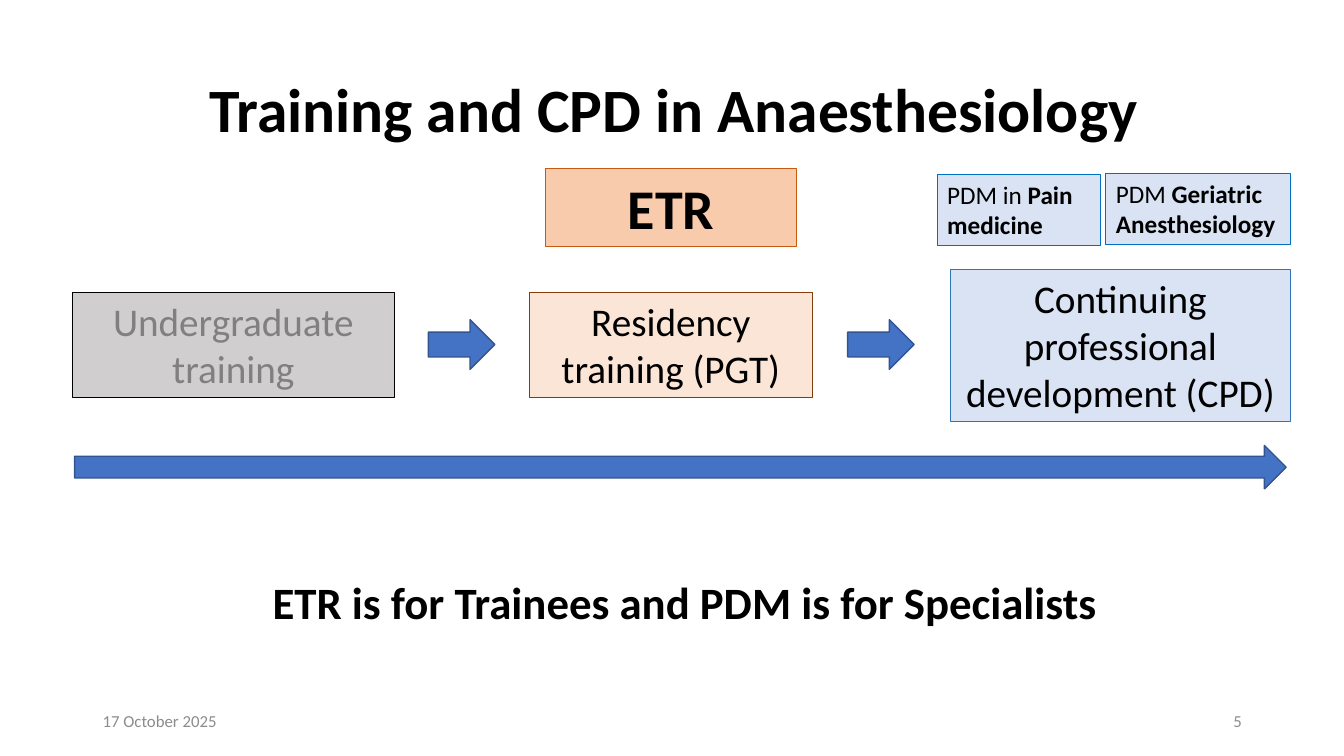
"""Builds the slide on training and CPD in anaesthesiology."""
import pptx
import pptx.util
import pptx.dml.color
import pptx.enum.shapes
import pptx.enum.text

Pt = pptx.util.Pt
ALIGN = pptx.enum.text.PP_ALIGN
ANCHOR = pptx.enum.text.MSO_ANCHOR
SHAPE = pptx.enum.shapes.MSO_SHAPE

COLORS = {
    "black": "000000", "grey_text": "808080", "footer": "8C8C8C",
    "grey": "D0CECE", "arrow": "4472C4", "arrow_line": "325491",
    "pale_orange": "FBE5D6", "brown": "843C0B",
    "orange": "F8CBAD", "dark_orange": "C55A11",
    "pale_blue": "DAE3F3", "blue": "2E75B6", "bright_blue": "0070C0",
}


class Deck:
    def __init__(self, slide, font="Calibri"):
        self.s = slide
        self.font = font

    def color(self, name):
        return pptx.dml.color.RGBColor.from_string(COLORS[name])

    def set_text(self, sp, runs, size, color="black", bold=None,
                 align=ALIGN.CENTER, anchor=ANCHOR.TOP, spacing=None):
        tf = sp.text_frame
        tf.word_wrap = True
        tf.vertical_anchor = anchor
        p = tf.paragraphs[0]
        p.alignment = align
        p.line_spacing = spacing
        p.font.name = self.font
        p.font.size = Pt(size)
        p.font.bold = bold
        p.font.color.rgb = self.color(color)
        for text, strong in runs:
            r = p.add_run()
            r.text = text
            if strong:
                r.font.bold = True

    def shape(self, kind, at, fill, line, width):
        sp = self.s.shapes.add_shape(kind, *map(Pt, at))
        sp.shadow.inherit = False
        sp.fill.solid()
        sp.fill.fore_color.rgb = self.color(fill)
        sp.line.color.rgb = self.color(line)
        sp.line.width = Pt(width)
        return sp

    def box(self, at, fill, line, runs, size, **style):
        sp = self.shape(SHAPE.RECTANGLE, at, fill, line, 0.75)
        self.set_text(sp, runs, size, **style)

    def arrow(self, *at):
        self.shape(SHAPE.RIGHT_ARROW, at, "arrow", "arrow_line", 1)

    def text(self, at, text, size, **style):
        sp = self.s.shapes.add_textbox(*map(Pt, at))
        self.set_text(sp, [(text, False)], size, **style)


def main():
    prs = pptx.Presentation()
    prs.slide_width, prs.slide_height = Pt(960), Pt(540)
    deck = Deck(prs.slides.add_slide(prs.slide_layouts[6]))

    stages = [
        ((51.8, 208.8, 229.7, 75), "grey", "black", "Undergraduate training", "grey_text"),
        ((378, 208.8, 202.3, 75), "pale_orange", "brown", "Residency training (PGT)", "black"),
        ((679, 192.2, 242.6, 108.7), "pale_blue", "blue",
         "Continuing professional development (CPD)", "black"),
    ]
    for at, fill, line, text, color in stages:
        deck.box(at, fill, line, [(text, False)], 28, color=color)
    for left in (306, 605.5):
        deck.arrow(left, 228.4, 47.5, 35.5)
    deck.arrow(53.3, 318.2, 865.4, 31)

    deck.text((67.7, 43.2, 828, 75), "Training and CPD in Anaesthesiology", 44,
              bold=True, anchor=ANCHOR.MIDDLE, spacing=0.9)
    deck.text((56.9, 406.8, 864.7, 46), "ETR is for Trainees and PDM is for Specialists",
              32, bold=True)
    footers = [(66.2, "17 October 2025", ALIGN.LEFT), (678.2, "5", ALIGN.RIGHT)]
    for left, text, align in footers:
        deck.text((left, 500.5, 216, 28.8), text, 12, color="footer",
                  align=align, anchor=ANCHOR.MIDDLE)

    deck.box((390, 120.2, 178.8, 55.6), "orange", "dark_orange", [("ETR", False)], 40, bold=True)
    diplomas = [
        ((669.5, 124.7, 116.8, 51), "PDM in ", "Pain medicine"),
        ((790, 123.7, 131.6, 51), "PDM ", "Geriatric Anesthesiology"),
    ]
    for at, prefix, subject in diplomas:
        deck.box(at, "pale_blue", "bright_blue", [(prefix, False), (subject, True)], 18,
                 align=ALIGN.LEFT)

    prs.save("out.pptx")


if __name__ == "__main__":
    main()
